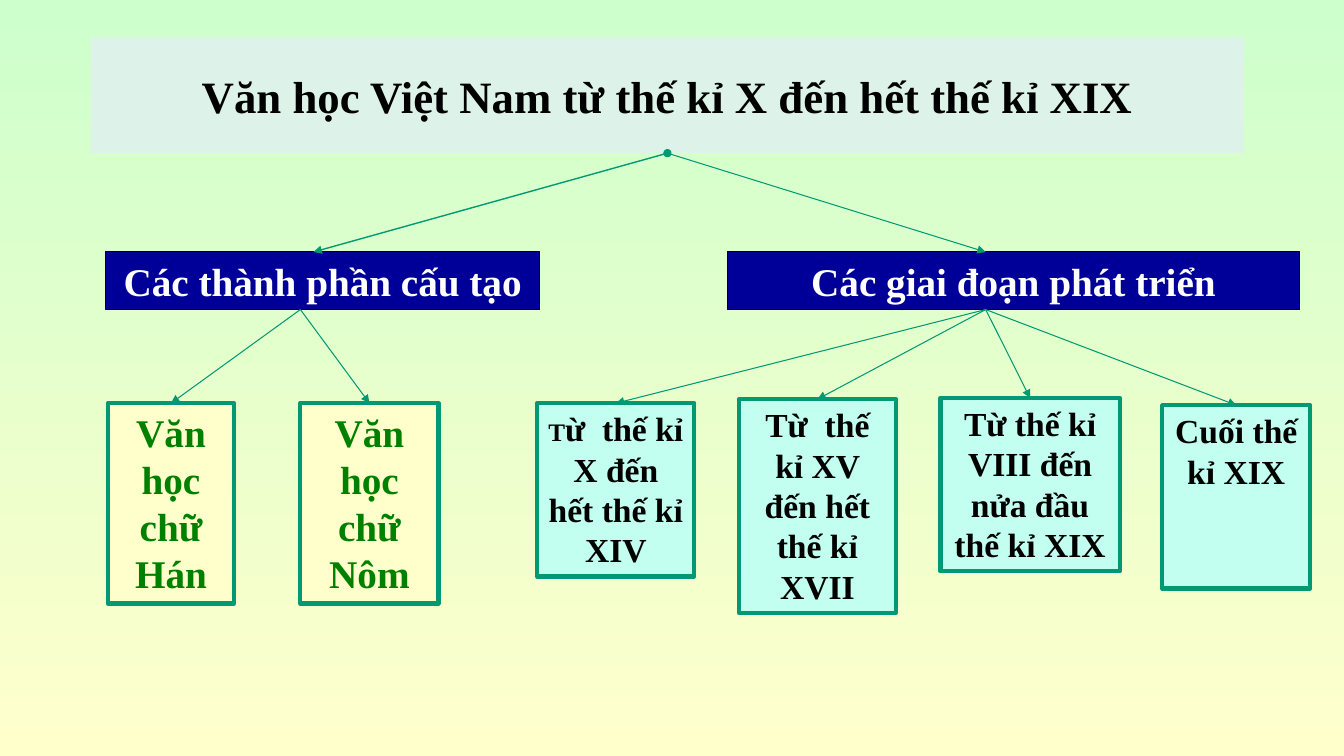
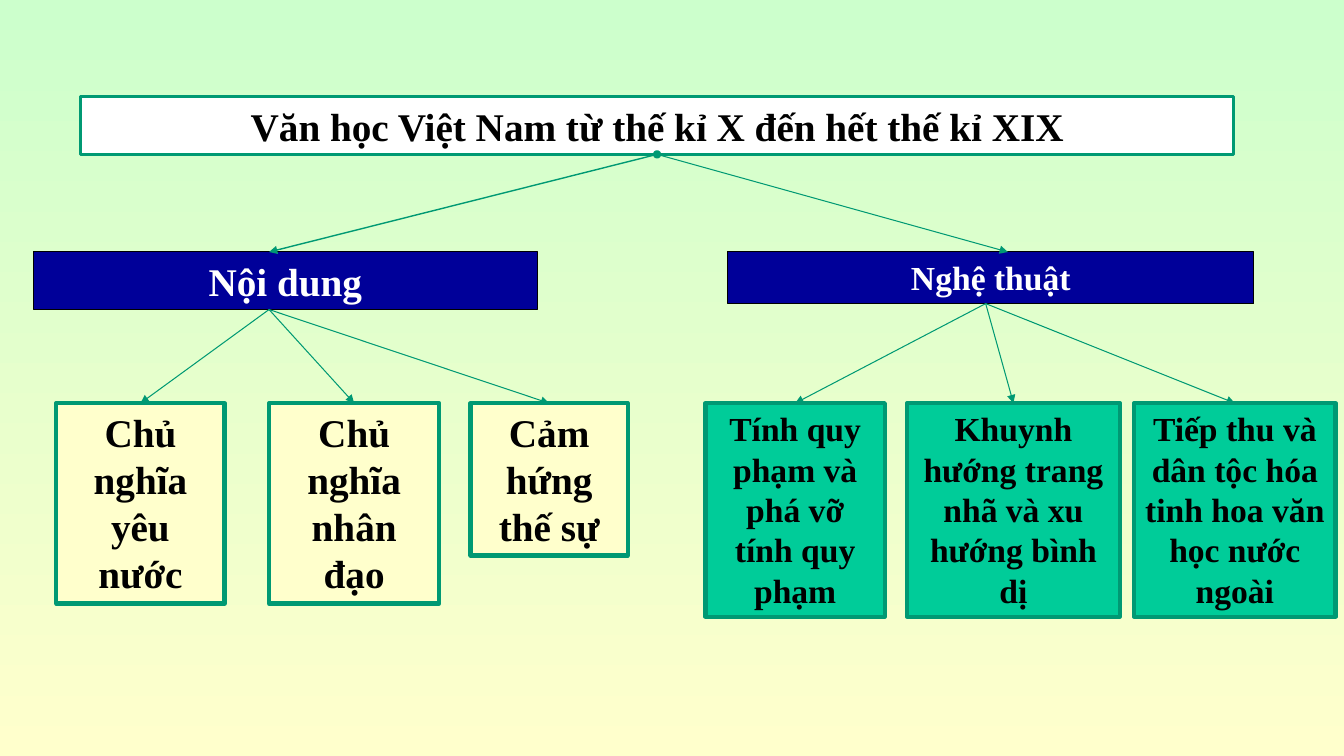
"""Build two tree diagrams on Vietnamese literature."""
from lxml.etree import SubElement
from pptx import Presentation
from pptx.dml.color import RGBColor
from pptx.enum.shapes import MSO_CONNECTOR as LINK, MSO_SHAPE as SHAPE
from pptx.enum.text import MSO_ANCHOR as ANCHOR, MSO_AUTO_SIZE as FIT, PP_ALIGN as ALIGN
from pptx.oxml.ns import qn
from pptx.util import Cm, Pt

FONT = "Times New Roman"
BLACK, WHITE, NAVY = "000000", "FFFFFF", "000099"
GREEN, LEAF, MINT = "009973", "008000", "00CC99"
CREAM, AQUA, PALE, LIME = "FFFFCC", "C2FFF0", "DDF3EA", "CCFFCC"
TITLE = "Văn học Việt Nam từ thế kỉ X đến hết thế kỉ XIX"


def color(code):
    """Turn a hex string into a colour."""
    return RGBColor.from_string(code)


def style(run, size, ink):
    """Set the font of a run."""
    font = run.font
    font.name, font.size, font.bold = FONT, Pt(size), True
    font.color.rgb = color(ink)


def paint(shape, text, size, ink, fill, edge=None, width=0.75, anchor=ANCHOR.TOP):
    """Give a shape its fill, outline and centred text."""
    shape.fill.solid()
    shape.fill.fore_color.rgb = color(fill)
    if edge:
        shape.line.color.rgb = color(edge)
        shape.line.width = Pt(width)
    else:
        shape.line.fill.background()
    frame = shape.text_frame
    frame.text = text
    frame.word_wrap = True
    frame.auto_size = FIT.NONE
    frame.vertical_anchor = anchor
    para = frame.paragraphs[0]
    para.alignment = ALIGN.CENTER
    style(para.runs[0], size, ink)


def box(slide, place, text, *look):
    """Add a painted rectangle."""
    shape = slide.shapes.add_shape(SHAPE.RECTANGLE, *map(Cm, place))
    shape.shadow.inherit = False
    paint(shape, text, *look)
    return shape


def start(deck, place, size, fill, *edge):
    """Add a slide and format its title."""
    slide = deck.slides.add_slide(deck.slide_layouts[5])
    title = slide.shapes.title
    title.left, title.top, title.width, title.height = map(Cm, place)
    edge = edge or (None, 0)
    paint(title, TITLE, size, BLACK, fill, *edge, ANCHOR.MIDDLE)
    return slide


def arrow(slide, x, y, source=None, target=None, width=0.75, dot=False):
    """Draw an arrow with one free end at x, y and the other joined."""
    link = slide.shapes.add_connector(LINK.STRAIGHT, x, y, x, y)
    if source:
        link.begin_connect(source, 2)
    if target:
        link.end_connect(target, 0)
    link.line.color.rgb = color(GREEN)
    link.line.width = Pt(width)
    props = link._element.spPr
    line = props.find(qn("a:ln"))
    if dot:
        SubElement(line, qn("a:headEnd"), type="oval")
    SubElement(line, qn("a:tailEnd"), type="triangle")
    SubElement(props, qn("a:effectLst"))


def branch(slide, place, text, size, enter, leave, leaves, look, width=0.75, dot=False):
    """Add a heading with its leaves and the arrows between them."""
    head = box(slide, place, text, size, WHITE, NAVY, BLACK)
    arrow(slide, Cm(enter), head.top, slide.shapes.title, None, width, dot)
    made = [box(slide, spot, label, *look, GREEN, 3) for label, *spot in leaves]
    for leaf in made:
        arrow(slide, Cm(leave), head.top + head.height, target=leaf)
    return made


def shrink(shape, size, rest, ink):
    """Make the first letter of a shape smaller than the rest."""
    para = shape.text_frame.paragraphs[0]
    text = para.text
    para.runs[0].text = text[0]
    style(para.runs[0], size, ink)
    tail = para.add_run()
    tail.text = text[1:]
    style(tail, rest, ink)


def periods(deck):
    """Build the slide on components and periods."""
    slide = start(deck, (2.29, 0.94, 29.06, 2.92), 32, PALE)
    branch(slide, (2.67, 6.35, 10.92, 1.45), "Các thành phần cấu tạo", 28, 7.9, 7.57, [
        ("Văn học chữ Hán", 2.72, 10.16, 3.18, 5.05),
        ("Văn học chữ Nôm", 7.57, 10.16, 3.48, 5.05),
    ], (28, LEAF, CREAM), 1, True)
    eras = branch(slide, (18.34, 6.35, 14.4, 1.45), "Các giai đoạn phát triển", 28, 24.84, 24.84, [
        ("Từ  thế kỉ X đến hết thế kỉ XIV", 13.54, 10.16, 3.96, 4.37),
        ("Từ  thế kỉ XV đến hết thế kỉ XVII", 18.62, 10.06, 3.96, 5.38),
        ("Từ thế kỉ VIII đến nửa đầu thế kỉ XIX", 23.7, 10.03, 4.52, 4.37),
        ("Cuối thế kỉ XIX", 29.29, 10.21, 3.73, 4.62),
    ], (24, BLACK, AQUA))
    shrink(eras[0], 18, 24, BLACK)


def traits(deck):
    """Build the slide on content and art."""
    slide = start(deck, (2.03, 2.44, 29.06, 1.45), 28, WHITE, GREEN, 2)
    branch(slide, (0.84, 6.35, 12.7, 1.45), "Nội dung", 28, 6.78, 6.78, [
        ("Chủ nghĩa yêu nước", 1.42, 10.16, 4.24, 5.05),
        ("Chủ nghĩa nhân đạo", 6.78, 10.16, 4.29, 5.05),
        ("Cảm hứng thế sự", 11.86, 10.16, 3.96, 3.84),
    ], (28, BLACK, CREAM), 1, True)
    branch(slide, (18.34, 6.35, 13.26, 1.3), "Nghệ thuật", 24, 25.4, 24.84, [
        ("Tính quy phạm và phá vỡ tính quy phạm", 17.78, 10.16, 4.52, 5.38),
        ("Khuynh hướng trang nhã và xu hướng bình dị", 22.86, 10.16, 5.36, 5.38),
        ("Tiếp thu và dân tộc hóa tinh hoa văn học nước ngoài", 28.58, 10.16, 5.08, 5.38),
    ], (24, BLACK, MINT))


def main():
    """Build and save the deck."""
    deck = Presentation()
    deck.slide_width, deck.slide_height = Cm(33.87), Cm(19.05)
    back = deck.slide_master.background.fill
    back.gradient()
    back.gradient_angle = 270
    for stop, code in zip(back.gradient_stops, (LIME, CREAM)):
        stop.color.rgb = color(code)
    periods(deck)
    traits(deck)
    deck.save("out.pptx")


if __name__ == "__main__":
    main()
